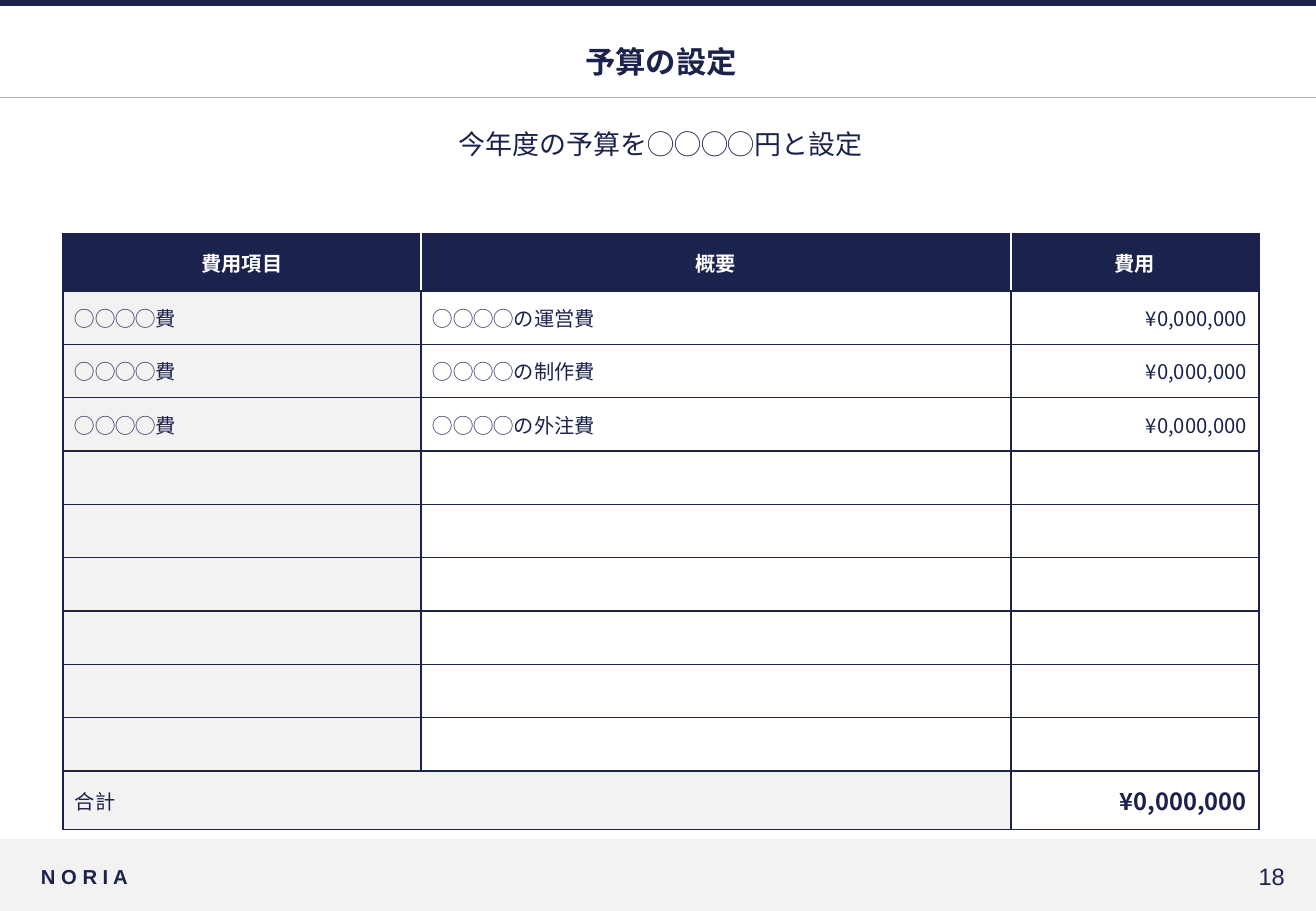
"""Builds the budget slide: heading, lead sentence, cost table and footer."""
from lxml import etree
from pptx import Presentation
from pptx import util as u
from pptx.dml.color import RGBColor
from pptx.enum import shapes, text
from pptx.oxml.ns import qn

PX = 7526
WIDTH, HEIGHT = 1316, 911
COLOURS = {"navy": "1B224C", "white": "FFFFFF", "pale": "F2F2F2", "rule": "AFAFAF"}
JAPANESE, LATIN = "Noto Sans CJK JP", "Arial"
LEFT, CENTRE, RIGHT = text.PP_ALIGN.LEFT, text.PP_ALIGN.CENTER, text.PP_ALIGN.RIGHT

COLUMN_WIDTHS = [358, 590, 248]
ROW_HEIGHTS = [57] + [53] * 9 + [58]
AMOUNT = "¥0,000,000"
HEADINGS = ["費用項目", "概要", "費用"]
COSTS = [["◯◯◯◯費", f"◯◯◯◯の{kind}費", AMOUNT] for kind in ("運営", "制作", "外注")]
ROWS = [HEADINGS] + COSTS + [["", "", ""]] * 6 + [["合計", "", AMOUNT]]


def px(*lengths):
    return [u.Emu(length * PX) for length in lengths]


def colour(name):
    return RGBColor.from_string(COLOURS[name])


def style_paragraph(paragraph, size, tint="navy", bold=False, align=LEFT, face=JAPANESE):
    paragraph.alignment = align
    font = paragraph.font
    font.size, font.bold, font.name = u.Pt(size), bold, face
    font.color.rgb = colour(tint)
    properties = paragraph._p.pPr.find(qn("a:defRPr"))
    east_asian = etree.Element(qn("a:ea"), typeface=face)
    properties.find(qn("a:latin")).addnext(east_asian)


def write_frame(frame, words, anchor, wrap=True, **style):
    frame.word_wrap = wrap
    frame.auto_size = text.MSO_AUTO_SIZE.NONE
    frame.vertical_anchor = anchor
    frame.margin_left, frame.margin_top, frame.margin_right, frame.margin_bottom = px(5, 5, 5, 5)
    frame.text = words
    style_paragraph(frame.paragraphs[0], **style)


def fill_placeholder(placeholder, box, words, anchor, **style):
    placeholder.left, placeholder.top, placeholder.width, placeholder.height = px(*box)
    write_frame(placeholder.text_frame, words, anchor, align=CENTRE, **style)


def remove_bullet(paragraph):
    properties = paragraph._p.get_or_add_pPr()
    properties.set("marL", "0")
    properties.set("indent", "0")
    properties.find(qn("a:defRPr")).addprevious(etree.Element(qn("a:buNone")))


def add_band(slide, top, height, fill):
    band = slide.shapes.add_shape(shapes.MSO_SHAPE.RECTANGLE, *px(0, top, WIDTH, height))
    band.shadow.inherit = False
    band.fill.solid()
    band.fill.fore_color.rgb = colour(fill)
    band.line.fill.background()


def add_rule(slide, y):
    rule = slide.shapes.add_connector(shapes.MSO_CONNECTOR.STRAIGHT, *px(0, y, WIDTH, y))
    rule.line.color.rgb = colour("rule")
    rule.line.width = u.Pt(0.5)
    etree.SubElement(rule._element.spPr, qn("a:effectLst"))


def add_footer_text(slide, left, words, **style):
    box = slide.shapes.add_textbox(*px(left, 857, 130, 38))
    write_frame(box.text_frame, words, text.MSO_ANCHOR.MIDDLE, wrap=False, face=LATIN, **style)


def set_borders(cell, **sides):
    properties = cell._tc.get_or_add_tcPr()
    for position, (side, tint) in enumerate(sides.items()):
        line = etree.Element(qn(f"a:ln{side}"), w=str(u.Pt(1)))
        fill = etree.SubElement(line, qn("a:solidFill"))
        etree.SubElement(fill, qn("a:srgbClr"), val=COLOURS[tint])
        properties.insert(position, line)


def format_cell(cell, words, row, column):
    header, total = row == 0, row == len(ROWS) - 1
    last_column = column == len(COLUMN_WIDTHS) - 1
    cell.margin_left, cell.margin_top, cell.margin_right, cell.margin_bottom = px(12, 12, 12, 12)
    cell.vertical_anchor = text.MSO_ANCHOR.MIDDLE
    cell.fill.solid()
    cell.fill.fore_color.rgb = colour("navy" if header else "white" if column else "pale")
    cell.text = words
    grand_total = total and last_column
    style_paragraph(
        cell.text_frame.paragraphs[0],
        size=14 if grand_total else 12,
        tint="white" if header else "navy",
        bold=header or grand_total,
        align=CENTRE if header else RIGHT if last_column else LEFT,
    )
    set_borders(
        cell,
        L="white" if header and column else "navy",
        R="white" if header and not last_column else "navy",
        T="navy",
        B="navy",
    )


def add_cost_table(slide):
    box = px(63, 234, sum(COLUMN_WIDTHS), sum(ROW_HEIGHTS))
    table = slide.shapes.add_table(len(ROWS), len(COLUMN_WIDTHS), *box).table
    table.horz_banding = False
    for column, width in zip(table.columns, px(*COLUMN_WIDTHS)):
        column.width = width
    for row, height in zip(table.rows, px(*ROW_HEIGHTS)):
        row.height = height
    for row, words in enumerate(ROWS):
        for column, entry in enumerate(words):
            format_cell(table.cell(row, column), entry, row, column)
    total = len(ROWS) - 1
    table.cell(total, 0).merge(table.cell(total, 1))


def main():
    presentation = Presentation()
    presentation.slide_width, presentation.slide_height = px(WIDTH, HEIGHT)
    slide = presentation.slides.add_slide(presentation.slide_layouts[1])
    title, lead = slide.placeholders
    fill_placeholder(title, (63, 38, 1196, 47), "予算の設定", text.MSO_ANCHOR.MIDDLE, size=18, bold=True)
    fill_placeholder(lead, (63, 123, 1196, 86), "今年度の予算を◯◯◯◯円と設定", text.MSO_ANCHOR.TOP, size=16)
    sentence = lead.text_frame.paragraphs[0]
    sentence.space_before, sentence.space_after = u.Pt(0), u.Pt(4)
    remove_bullet(sentence)
    add_band(slide, 839, 72, "pale")
    add_band(slide, 0, 6, "navy")
    add_rule(slide, 97)
    add_footer_text(slide, 36, "N O R I A", size=12, bold=True)
    add_footer_text(slide, 1160, "18", size=14, align=RIGHT)
    add_cost_table(slide)
    presentation.save("out.pptx")


if __name__ == "__main__":
    main()
